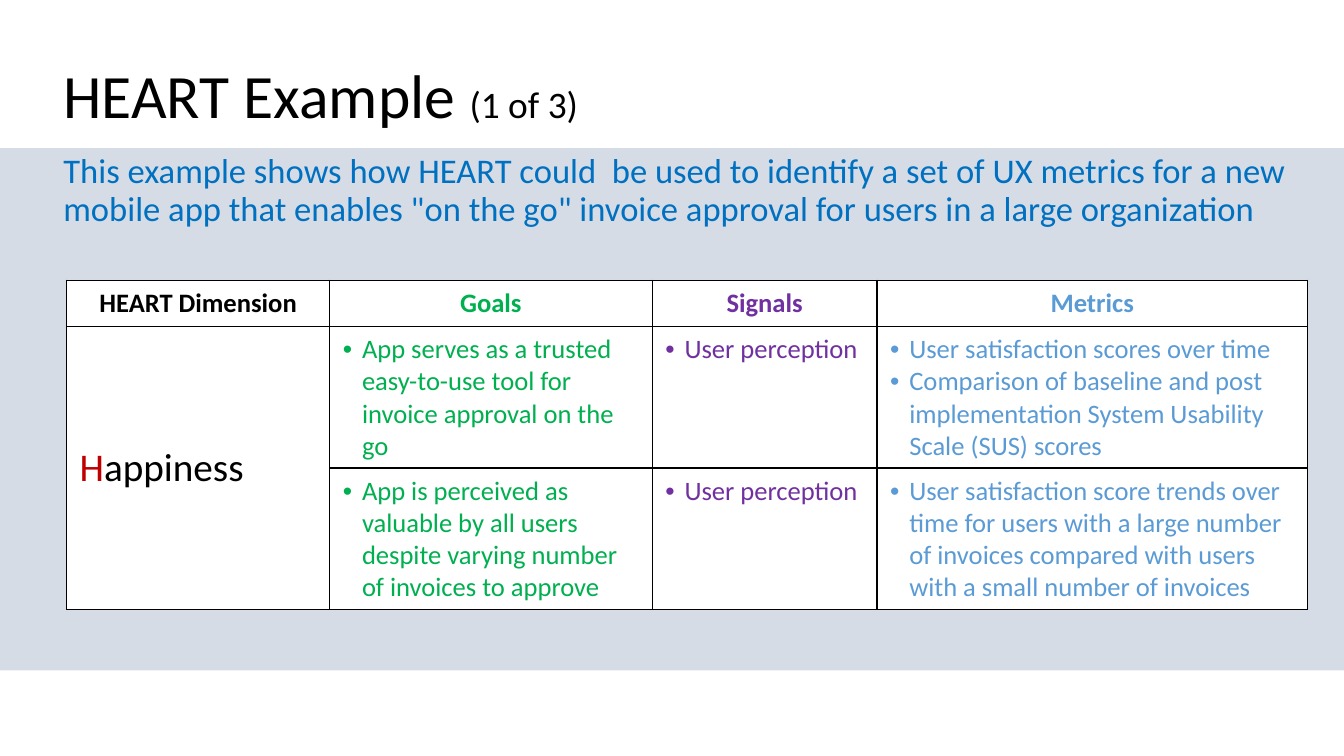
from dataclasses import dataclass

from lxml.etree import SubElement
from pptx import Presentation
from pptx.dml.color import RGBColor
from pptx.enum.shapes import MSO_SHAPE
from pptx.enum.text import MSO_ANCHOR, PP_ALIGN
from pptx.oxml import parse_xml
from pptx.oxml.ns import nsdecls, qn
from pptx.util import Inches, Pt

WIDTH, HEIGHT = Inches(13.33), Inches(7.5)
GRID = 100
FONT = "Calibri"
BLACK, WHITE, RED = "000000", "FFFFFF", "C00000"
BLUE, BAND = "0070C0", "D6DCE5"
CELL_SIZE = 19


@dataclass
class Run:
    text: str
    size: float
    color: str = BLACK
    bold: bool = False


@dataclass
class Box:
    left: float
    top: float
    width: float
    height: float
    anchor: MSO_ANCHOR
    runs: list[Run]


@dataclass
class Column:
    name: str
    width: float
    color: str
    rows: list[list[str]]


BOXES = [
    Box(3.98, 19.73, 94.5, 12.8, MSO_ANCHOR.TOP, [
        Run("This example shows how HEART could  be used to identify a set of UX "
            "metrics for a new mobile app that enables \"on the go\" invoice "
            "approval for users in a large organization", 24.7, BLUE)]),
    Box(3.98, 7.87, 92.03, 10.27, MSO_ANCHOR.BOTTOM, [
        Run("HEART Example ", 44), Run("(1 of 3)", 26.7)]),
]

COLUMNS = [
    Column("HEART Dimension", 19.58, BLACK, []),
    Column("Goals", 24, "00B050", [
        ["App serves as a trusted easy-to-use tool for invoice approval on the go"],
        ["App is perceived as valuable by all users despite varying number of "
         "invoices to approve"]]),
    Column("Signals", 16.73, "7030A0", [["User perception"], ["User perception"]]),
    Column("Metrics", 32.03, "5B9BD5", [
        ["User satisfaction scores over time",
         "Comparison of baseline and post implementation System Usability Scale "
         "(SUS) scores"],
        ["User satisfaction score trends over time for users with a large number "
         "of invoices compared with users with a small number of invoices"]]),
]
ROW_HEIGHTS = [5.87, 18.67, 18.67]


def x(cols: float) -> int:
    return round(WIDTH * cols / GRID)


def y(rows: float) -> int:
    return round(HEIGHT * rows / GRID)


def paint(fill, color: str) -> None:
    fill.solid()
    fill.fore_color.rgb = RGBColor.from_string(color)


def add_runs(p, runs: list[Run]) -> None:
    for run in runs:
        r = p.add_run()
        r.text = run.text
        r.font.name = FONT
        r.font.size = Pt(run.size)
        r.font.bold = run.bold
        paint(r.font.fill, run.color)


def add_band(s) -> None:
    sp = s.shapes.add_shape(MSO_SHAPE.RECTANGLE, 0, y(19.6), WIDTH, y(69.07))
    sp.shadow.inherit = False
    paint(sp.fill, BAND)
    sp.line.fill.background()


def add_box(s, box: Box) -> None:
    sp = s.shapes.add_textbox(x(box.left), y(box.top), x(box.width), y(box.height))
    tf = sp.text_frame
    tf.word_wrap = True
    tf.vertical_anchor = box.anchor
    p = tf.paragraphs[0]
    p.line_spacing = 0.9
    add_runs(p, box.runs)


def style_cell(cell) -> None:
    cell.margin_left = cell.margin_right = x(0.98)
    cell.margin_top = cell.margin_bottom = y(0.93)
    paint(cell.fill, WHITE)
    tcPr = cell._tc.get_or_add_tcPr()
    for i, side in enumerate("LRTB"):
        tcPr.insert(i, parse_xml(
            f'<a:ln{side} {nsdecls("a")} w="{Pt(1)}"><a:solidFill>'
            f'<a:srgbClr val="{BLACK}"/></a:solidFill></a:ln{side}>'))


def add_bullets(tf, items: list[str], color: str) -> None:
    for i, item in enumerate(items):
        p = tf.add_paragraph() if i else tf.paragraphs[0]
        pPr = p._p.get_or_add_pPr()
        pPr.set("marL", str(x(1.43)))
        pPr.set("indent", str(-x(1.43)))
        SubElement(pPr, qn("a:buFont"), typeface="Arial")
        SubElement(pPr, qn("a:buChar"), char="•")
        add_runs(p, [Run(item, CELL_SIZE, color)])


def add_heart_table(s) -> None:
    width = sum(c.width for c in COLUMNS)
    table = s.shapes.add_table(len(ROW_HEIGHTS), len(COLUMNS), x(4.95), y(37.07),
                               x(width), y(sum(ROW_HEIGHTS))).table
    table.first_row = table.horz_banding = False
    for row, height in zip(table.rows, ROW_HEIGHTS):
        row.height = y(height)
    for cell in table.iter_cells():
        style_cell(cell)

    for j, column in enumerate(COLUMNS):
        table.columns[j].width = x(column.width)
        header = table.cell(0, j)
        header.vertical_anchor = MSO_ANCHOR.MIDDLE
        p = header.text_frame.paragraphs[0]
        p.alignment = PP_ALIGN.CENTER
        add_runs(p, [Run(column.name, CELL_SIZE, column.color, True)])
        for i, items in enumerate(column.rows, start=1):
            add_bullets(table.cell(i, j).text_frame, items, column.color)

    dimension = table.cell(1, 0)
    dimension.merge(table.cell(2, 0))
    dimension.vertical_anchor = MSO_ANCHOR.MIDDLE
    add_runs(dimension.text_frame.paragraphs[0],
             [Run("H", 28, RED), Run("appiness", 28)])


def main() -> None:
    prs = Presentation()
    prs.slide_width, prs.slide_height = WIDTH, HEIGHT
    s = prs.slides.add_slide(prs.slide_layouts[6])
    paint(s.background.fill, WHITE)
    add_band(s)
    for box in BOXES:
        add_box(s, box)
    add_heart_table(s)
    prs.save("out.pptx")


if __name__ == "__main__":
    main()
